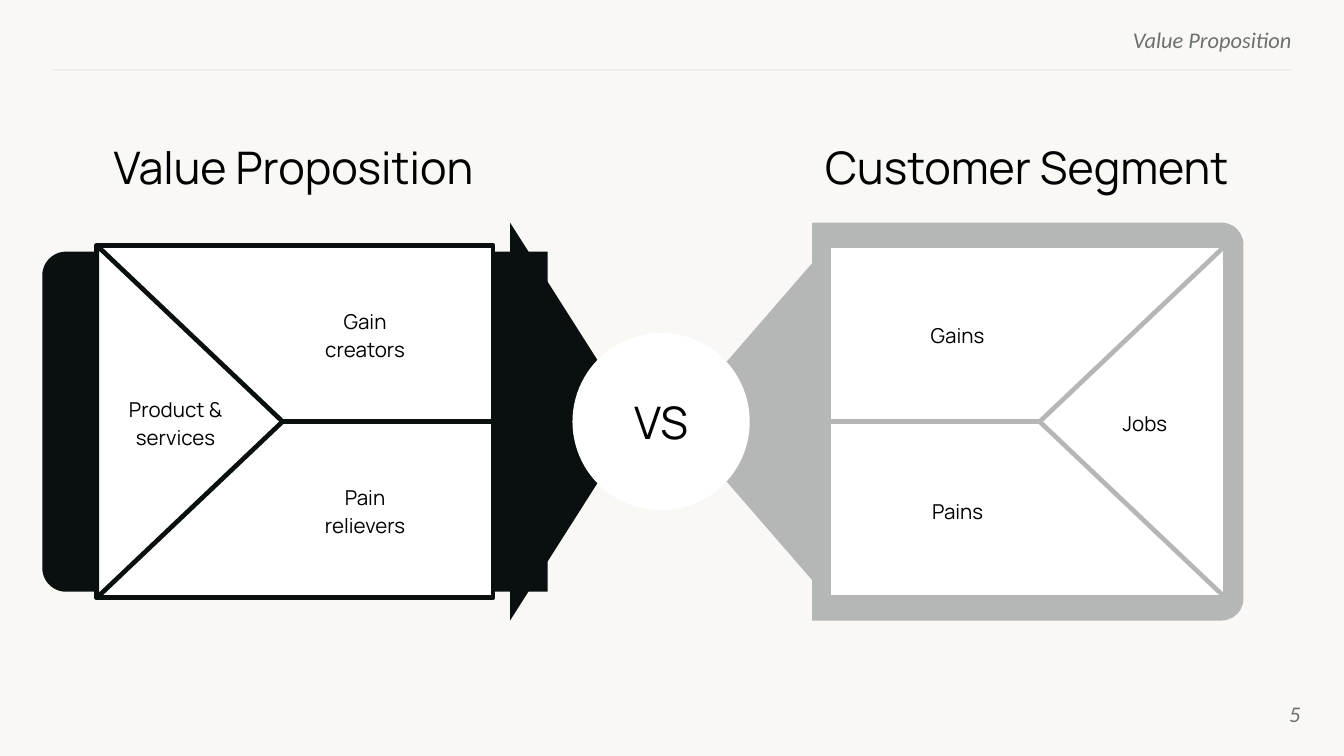
from dataclasses import dataclass

from lxml import etree
from pptx import Presentation
from pptx.dml.color import RGBColor
from pptx.enum import shapes as kinds, text as align
from pptx.oxml.ns import qn
from pptx.util import Cm, Pt

SHAPE = kinds.MSO_SHAPE
ALIGN = align.PP_ALIGN
ANCHOR = align.MSO_ANCHOR


@dataclass(frozen=True)
class Theme:
    background: str = "F9F8F5"
    ink: str = "000000"
    muted: str = "6C706F"
    rule: str = "EFEFEF"
    panel: str = "FFFFFF"
    value: str = "09100F"
    customer: str = "B5B7B7"
    heading: tuple = ("Manrope", 24)
    label: tuple = ("Manrope", 11)
    furniture: tuple = ("Calibri", 12)
    outline: float = 2.5


THEME = Theme()
MIDDLE = 7.97  # height on the slide of the axis both sides share


def apply(target, formats):
    for name, value in formats.items():
        setattr(target, name, value)


def write(frame, words, style, color=THEME.ink, alignment=ALIGN.CENTER,
          anchor=ANCHOR.MIDDLE, inset=0, spacing=None, italic=None):
    margin = Cm(inset)
    apply(frame, dict(word_wrap=True, vertical_anchor=anchor, margin_left=margin,
                      margin_right=margin, margin_top=margin, margin_bottom=margin))
    paragraph = frame.paragraphs[0]
    paragraph.text = words
    apply(paragraph, dict(alignment=alignment, line_spacing=spacing))
    family, size = style
    for run in paragraph.runs:
        apply(run.font, dict(name=family, size=Pt(size), italic=italic))
        run.font.color.rgb = RGBColor.from_string(color)


def add_words(slide, box, words, style, **formats):
    holder = slide.shapes.add_textbox(*map(Cm, box))
    write(holder.text_frame, words, style, **formats)


def add_block(slide, kind, box, fill, outline=None, rotation=0):
    """Draw a shape so that it fills box after any quarter turn."""
    left, top, width, height = box
    if rotation:
        left, top = left + (width - height) / 2, top + (height - width) / 2
        width, height = height, width
    block = slide.shapes.add_shape(kind, *map(Cm, (left, top, width, height)))
    block.shadow.inherit = False
    block.rotation = rotation
    block.fill.solid()
    block.fill.fore_color.rgb = RGBColor.from_string(fill)
    if outline:
        block.line.color.rgb = RGBColor.from_string(outline)
        block.line.width = Pt(THEME.outline)
    else:
        block.line.fill.background()
    return block


def centred(left, width, height, middle=MIDDLE):
    return left, middle - height / 2, width, height


def add_backdrop(slide, body_box, arrow_box, color, rounding, outward, inward):
    """Body with rounded outer corners and an arrow head towards the centre."""
    body = add_block(slide, SHAPE.ROUND_2_SAME_RECTANGLE, body_box, color, rotation=outward)
    body.adjustments[0] = rounding
    add_block(slide, SHAPE.ISOSCELES_TRIANGLE, arrow_box, color, rotation=inward)


def add_envelope(slide, box, color, inward, labels):
    """Two stacked panels and an outer triangle; labels run upper, lower, triangle."""
    left, top, width, height = box
    half = height / 2
    triangle_width = 3.51
    for row in range(2):
        add_block(slide, SHAPE.RECTANGLE, (left, top + row * half, width, half),
                  THEME.panel, color)
    triangle_left = left if inward == 90 else left + width - triangle_width
    add_block(slide, SHAPE.ISOSCELES_TRIANGLE, (triangle_left, top, triangle_width, height),
              THEME.panel, color, inward)
    middles = (top + half / 2, top + 1.5 * half, top + half)
    for (words, offset, label_width, label_height), middle in zip(labels, middles):
        add_words(slide, centred(left + offset, label_width, label_height, middle),
                  words, THEME.label, spacing=1.15)


def add_furniture(slide, box):
    """Running header, rule and page number."""
    left, top, width, height = box
    right = left + width
    formats = dict(color=THEME.muted, alignment=ALIGN.RIGHT, italic=True)
    add_words(slide, (right - 9.78, top, 9.78, 0.46), "Value Proposition",
              THEME.furniture, anchor=ANCHOR.TOP, **formats)
    rule = slide.shapes.add_connector(kinds.MSO_CONNECTOR.STRAIGHT,
                                      Cm(left), Cm(1.32), Cm(right), Cm(1.32))
    rule.line.color.rgb = RGBColor.from_string(THEME.rule)
    rule.line.width = Pt(0.75)
    etree.SubElement(rule._element.spPr, qn("a:effectLst"))
    add_words(slide, (right - 1.35, top + height - 1.09, 1.52, 1.09), "5",
              THEME.furniture, **formats)


def add_versus(slide, box):
    circle = add_block(slide, SHAPE.OVAL, box, THEME.panel)
    write(circle.text_frame, "VS", THEME.heading, inset=0.13)


def main():
    deck = Presentation()
    apply(deck, dict(slide_width=Cm(25.4), slide_height=Cm(14.29)))
    slide = deck.slides.add_slide(deck.slide_layouts[6])
    slide.background.fill.solid()
    slide.background.fill.fore_color.rgb = RGBColor.from_string(THEME.background)
    add_furniture(slide, (0.99, 0.5, 23.42, 13.54))

    # Headings
    for words, left, width in (("Value Proposition", 1.8, 7.49),
                               ("Customer Segment", 14.91, 8.99)):
        add_words(slide, (left, 2.57, width, 1.17), words, THEME.heading,
                  anchor=ANCHOR.TOP, inset=0.08)

    # Value proposition side, pointing right
    add_backdrop(slide, centred(0.8, 9.55, 6.43), centred(9.64, 2.39, 7.52),
                 THEME.value, 0.07, outward=270, inward=90)
    add_envelope(slide, centred(1.83, 7.49, 6.66), THEME.value, 90,
                 (("Gain\vcreators", 3.66, 2.82, 1.02),
                  ("Pain\vrelievers", 3.66, 2.82, 1.02),
                  ("Product & services", 0.08, 2.82, 1.02)))

    # Customer segment side, pointing left
    add_backdrop(slide, centred(15.35, 8.15, 7.52), centred(12.75, 2.79, 6.43),
                 THEME.customer, 0.055, outward=90, inward=270)
    add_envelope(slide, centred(15.67, 7.49, 6.66), THEME.customer, 270,
                 (("Gains", 1.02, 2.82, 0.48),
                  ("Pains", 1.02, 2.82, 0.48),
                  ("Jobs", 4.85, 2.24, 0.48)))

    add_versus(slide, centred(10.82, 3.35, 3.35))
    deck.save("out.pptx")


if __name__ == "__main__":
    main()
